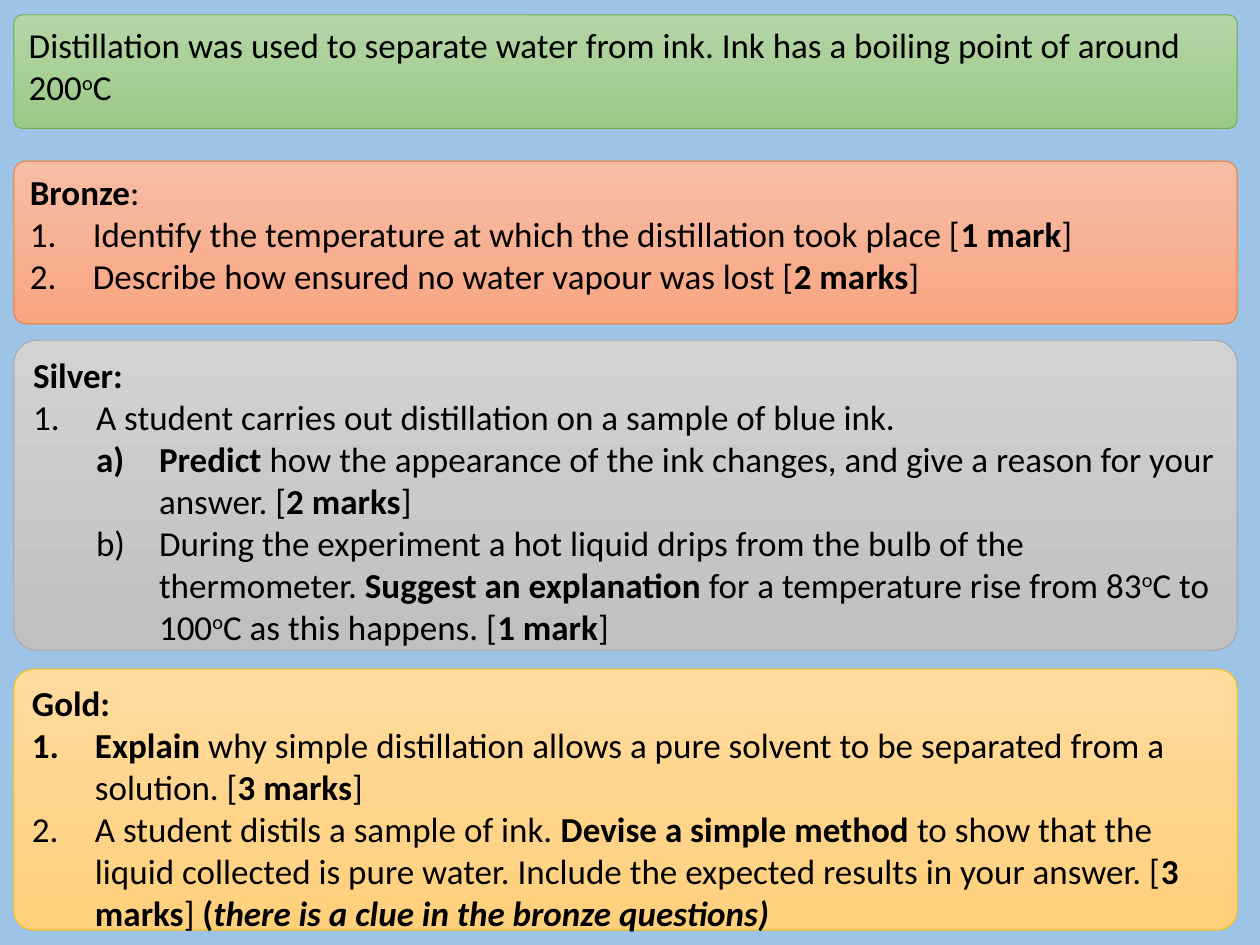
"""Build a slide of tiered distillation questions: bronze, silver and gold."""
from lxml import etree
from pptx import Presentation
from pptx.dml.color import RGBColor
from pptx.enum.shapes import MSO_SHAPE
from pptx.enum.text import MSO_ANCHOR, PP_ALIGN
from pptx.oxml.ns import qn
from pptx.util import Cm, Pt

ROUNDED = MSO_SHAPE.ROUNDED_RECTANGLE
TOP = MSO_ANCHOR.TOP
LEFT = PP_ALIGN.LEFT

PLAIN = {}
BOLD = {"bold": True}
BOLD_ITALIC = {"bold": True, "italic": True}
RAISED = {"raised": True}
HEADING, NUMBER, LETTER = range(3)
NUMBERING = {NUMBER: "arabicPeriod", LETTER: "alphaLcParenR"}
INDENT = Cm(1.27)


def color(hex_string):
    return RGBColor.from_string(hex_string)


def add_text(paragraph, text, bold=False, italic=False, raised=False):
    run = paragraph.add_run()
    run.text = text
    run.font.name = "Calibri"
    run.font.size = Pt(20)
    run.font.color.rgb = color("000000")
    run.font.bold = bold
    run.font.italic = italic
    if raised:
        run._r.get_or_add_rPr().set("baseline", "30000")


context = [
    (HEADING, [("Distillation was used to separate water from ink. Ink has a boiling point of around 200", PLAIN),
               ("o", RAISED), ("C", PLAIN)]),
]
bronze = [
    (HEADING, [("Bronze", BOLD), (":", PLAIN)]),
    (NUMBER, [("Identify the temperature at which the distillation took place [", PLAIN),
              ("1 mark", BOLD), ("]", PLAIN)]),
    (NUMBER, [("Describe how ensured no water vapour was lost [", PLAIN),
              ("2 marks", BOLD), ("]", PLAIN)]),
]
silver = [
    (HEADING, [("Silver:", BOLD)]),
    (NUMBER, [("A student carries out distillation on a sample of blue ink.", PLAIN)]),
    (LETTER, [("Predict", BOLD),
              (" how the appearance of the ink changes, and give a reason for your answer. [", PLAIN),
              ("2 marks", BOLD), ("]", PLAIN)]),
    (LETTER, [("During the experiment a hot liquid drips from the bulb of the thermometer. ", PLAIN),
              ("Suggest an explanation ", BOLD), ("for a temperature rise from 83", PLAIN),
              ("o", RAISED), ("C to 100", PLAIN), ("o", RAISED),
              ("C as this happens. [", PLAIN), ("1 mark", BOLD), ("]", PLAIN)]),
]
gold = [
    (HEADING, [("Gold:", BOLD)]),
    (NUMBER, [("Explain", BOLD),
              (" why simple distillation allows a pure solvent to be separated from a solution. [", PLAIN),
              ("3 marks", BOLD), ("]", PLAIN)]),
    (NUMBER, [("A student distils a sample of ink. ", PLAIN), ("Devise a simple method ", BOLD),
              ("to show that the liquid collected is pure water. "
               "Include the expected results in your answer. [", PLAIN),
              ("3 marks", BOLD), ("] ", PLAIN), ("(", BOLD),
              ("there is a clue in the bronze questions)", BOLD_ITALIC)]),
]
panels = [
    (0.3, 2.29, "B5D5A7", "9CC987", "70AD47", context),
    (3.25, 3.28, "F7BDA5", "F8A582", "ED7D31", bronze),
    (6.86, 6.25, "D2D2D2", "C0C0C0", "A5A5A5", silver),
    (13.49, 5.26, "FFDB9E", "FFD07C", "FFC000", gold),
]

deck = Presentation()
deck.slide_width = Cm(25.4)
deck.slide_height = Cm(19.05)
slide = deck.slides.add_slide(deck.slide_layouts[6])
slide.background.fill.solid()
slide.background.fill.fore_color.rgb = color("9DC3E6")

for top, height, upper_tint, lower_tint, outline, content in panels:
    panel = slide.shapes.add_shape(ROUNDED, Cm(0.28), Cm(top), Cm(24.66), Cm(height))
    panel.adjustments[0] = 0.075
    panel.shadow.inherit = False
    panel.fill.gradient()
    panel.fill.gradient_angle = 270
    for stop, tint in zip(panel.fill.gradient_stops, (upper_tint, lower_tint)):
        stop.color.rgb = color(tint)
    panel.line.color.rgb = color(outline)
    panel.line.width = Pt(0.5)

    frame = panel.text_frame
    frame.word_wrap = True
    frame.vertical_anchor = TOP
    for index, (depth, passages) in enumerate(content):
        paragraph = frame.add_paragraph() if index else frame.paragraphs[0]
        paragraph.alignment = LEFT
        if depth in NUMBERING:
            paragraph.level = depth - 1
            properties = paragraph._p.get_or_add_pPr()
            properties.set("marL", str(depth * INDENT))
            properties.set("indent", str(-INDENT))
            etree.SubElement(properties, qn("a:buAutoNum"), type=NUMBERING[depth])
        for text, style in passages:
            add_text(paragraph, text, **style)

deck.save("out.pptx")
